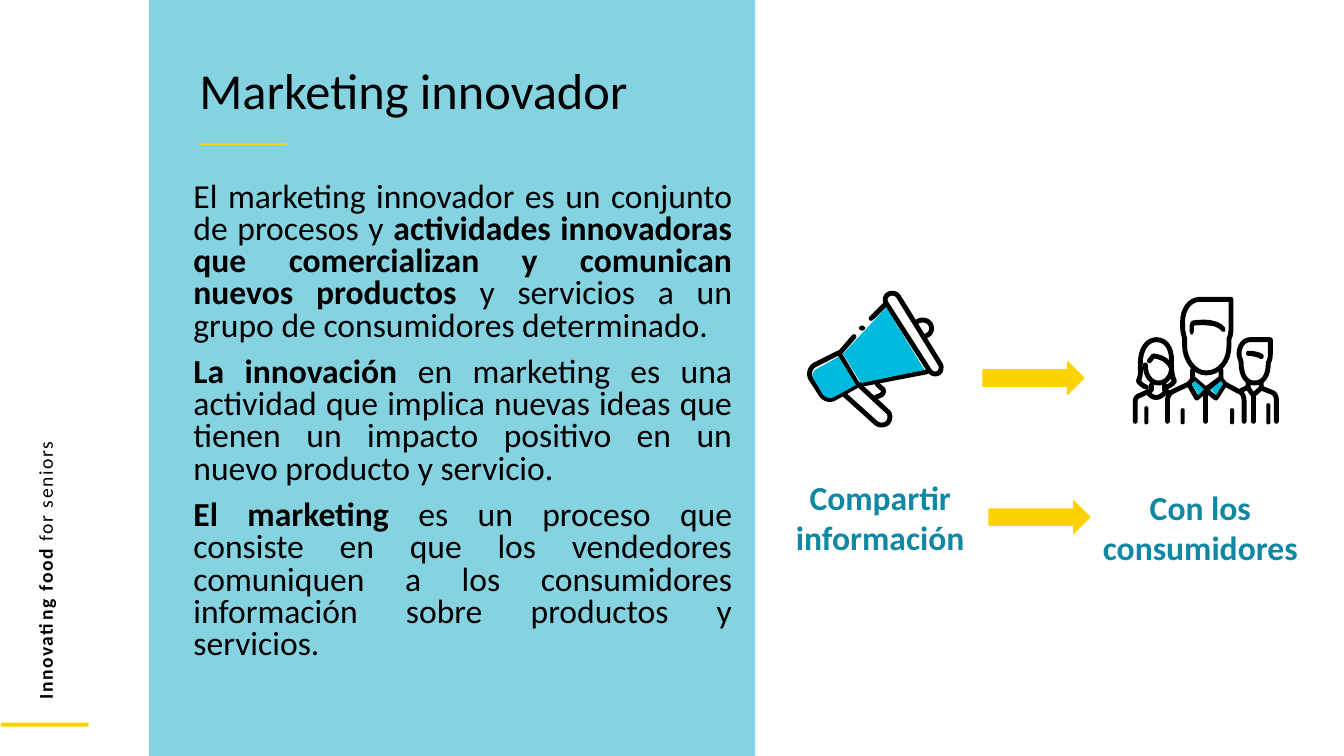
from lxml.etree import SubElement
from pptx import Presentation
from pptx.dml.color import RGBColor
from pptx.enum.shapes import MSO_SHAPE
from pptx.enum.text import MSO_ANCHOR, PP_ALIGN
from pptx.oxml.ns import qn
from pptx.util import Inches, Pt

WIDTH, HEIGHT = 13.33, 7.5
FONT = "Calibri"
BLACK = "000000"
AQUA, CYAN, TEAL = "85D2E1", "00BADE", "1188A3"
YELLOW, AMBER = "FFD100", "FED100"
UNITS_PER_INCH = 100
STROKE = 3.5

bands = [
    (AQUA, 1.48, 0, 6.01, HEIGHT),
    (YELLOW, 0.01, 7.17, 0.87, 0.04),
    (YELLOW, 1.98, 1.42, 0.86, 0.02),
]
tagline = [[("Innovating food ", True), ("for seniors", False)]]
title = [[("Marketing innovador", False)]]
explanation = [
    [
        ("El marketing innovador es un conjunto de procesos y ", False),
        ("actividades innovadoras que comercializan y comunican nuevos productos ", True),
        ("y servicios a un grupo de consumidores determinado. ", False),
    ],
    [
        ("La innovación ", True),
        ("en marketing es una actividad que implica nuevas ideas que tienen un impacto "
         "positivo en un nuevo producto y servicio.\u00a0", False),
    ],
    [
        ("El marketing ", True),
        ("es un proceso que consiste en que los vendedores comuniquen a los consumidores "
         "información sobre productos y servicios.", False),
    ],
]
captions = [
    ("Compartir información", 7.79, 4.68, 1.88),
    ("Con los consumidores", 10.81, 4.78, 2.19),
]
arrows = [(9.75, 3.59), (9.81, 4.97)]

horn = "M 879 305 L 917 367 L 854 380 L 836 351 Z"
mouthpiece = ("M 827 394 C 823 396 818 394 816 391 L 807 376 C 806 374 806 372 806 371 "
              "C 807 369 808 367 810 366 L 832 354 L 849 382 Z")
megaphone = (
    "M 879 301 L 922 368 C 924 371 928 372 931 370 C 933 369 934 365 933 362 "
    "L 891 294 C 889 291 885 290 881 292 C 878 294 877 298 879 301 Z "
    "M 910 319 C 915 316 921 318 923 322 C 925 326 924 331 919 333 "
    "M 919 369 L 851 382 M 834 349 L 847 334 M 864 316 L 878 302 "
    "M 832 350 L 851 382 L 828 395 C 823 398 817 396 814 391 "
    "L 805 377 C 801 372 803 365 808 362 Z "
    "M 838 392 L 868 419 C 872 423 877 422 880 420 C 883 417 884 411 880 408 L 853 383 "
    "M 869 394 L 874 392 C 877 390 877 386 874 385 L 870 381"
)
collars = [
    "M 1189 392 L 1182 381 L 1185 378 L 1194 386 Z",
    "M 1206 392 L 1201 386 L 1211 378 L 1213 381 Z",
]
man = (
    "M 1221 297 L 1190 297 C 1180 297 1173 307 1173 319 L 1173 324 C 1173 328 1174 332 1175 336 "
    "L 1175 343 C 1175 357 1185 370 1196 370 C 1210 370 1219 358 1219 343 L 1219 336 "
    "C 1221 332 1221 328 1221 324 Z M 1183 367 L 1183 375 L 1196 386 L 1211 375 L 1211 367 "
    "M 1183 376 L 1179 381 L 1187 395 L 1196 387 Z M 1211 376 L 1215 381 L 1206 395 L 1196 387 Z "
    "M 1158 418 L 1158 398 C 1158 393 1160 390 1164 388 L 1179 381 "
    "M 1234 418 L 1234 398 C 1234 393 1232 389 1228 388 L 1215 381 M 1196 387 L 1196 418"
)
woman = (
    "M 1137 384 C 1133 383 1130 379 1129 378 C 1132 373 1131 366 1131 361 "
    "C 1131 346 1138 337 1147 337 C 1157 337 1162 346 1162 357 C 1162 366 1162 373 1165 378 "
    "C 1163 381 1160 383 1157 384 M 1136 362 C 1136 373 1142 380 1149 380 "
    "C 1156 380 1162 374 1162 365 C 1158 356 1150 354 1144 353 L 1140 358 "
    "M 1142 382 L 1142 387 L 1129 393 C 1127 394 1126 396 1126 399 L 1126 418 "
    "M 1139 390 C 1144 396 1150 396 1156 389 M 1155 382 L 1155 387 L 1160 390"
)
boy = (
    "M 1260 337 L 1240 337 C 1233 337 1229 344 1229 351 C 1229 355 1231 357 1231 360 "
    "C 1231 372 1236 380 1244 380 C 1253 380 1258 373 1258 360 C 1260 356 1260 353 1260 350 Z "
    "M 1238 380 L 1238 384 L 1230 388 M 1238 385 L 1243 392 L 1251 385 "
    "M 1251 380 L 1251 385 L 1261 389 C 1265 390 1266 394 1266 397 L 1266 418 M 1243 393 L 1243 418"
)
man_fringe = (
    "M 1215 325 C 1207 315 1190 317 1183 318 C 1181 319 1180 321 1180 323 L 1180 329 "
    "C 1180 330 1181 332 1182 332 C 1183 332 1184 330 1184 329 L 1184 323 "
    "C 1187 323 1192 322 1198 323 C 1204 323 1209 325 1212 329 C 1213 329 1214 329 1215 329 "
    "C 1215 327 1215 326 1215 325 Z"
)
boy_fringe = (
    "M 1252 351 C 1247 348 1238 348 1238 348 C 1237 348 1236 349 1236 351 "
    "C 1236 352 1237 353 1238 353 C 1240 353 1247 354 1250 356 C 1251 356 1251 356 1251 356 "
    "C 1252 356 1253 356 1253 355 C 1254 353 1253 352 1252 351 Z"
)
dot = (852, 323, 6, 5)
sleeves = [(1135, 403, 4, 18), (1171, 405, 4, 16), (1220, 405, 4, 16), (1256, 400, 4, 21)]


def color(value):
    return RGBColor.from_string(value)


def paint(shape, fill, line=None, weight=1):
    shape.shadow.inherit = False
    if fill:
        shape.fill.solid()
        shape.fill.fore_color.rgb = color(fill)
    else:
        shape.fill.background()
    if line:
        shape.line.color.rgb = color(line)
        shape.line.width = Pt(weight)
    else:
        shape.line.fill.background()


def add_preset(slide, preset, box, fill, line=None):
    paint(slide.shapes.add_shape(preset, *map(Inches, box)), fill, line)


def capsule(left, top, width, height):
    right, bottom, r = left + width, top + height, width / 2
    return (f"M {left} {top + r} C {left} {top - r / 3} {right} {top - r / 3} {right} {top + r} "
            f"L {right} {bottom - r} C {right} {bottom + r / 3} {left} {bottom + r / 3} "
            f"{left} {bottom - r} Z")


def curve(start, first, second, end, steps=8):
    for step in range(1, steps + 1):
        t = step / steps
        u = 1 - t
        yield tuple(u**3 * a + 3 * u * u * t * b + 3 * u * t * t * c + t**3 * d
                    for a, b, c, d in zip(start, first, second, end))


def trace(outline):
    tokens = iter(outline.split())

    def point():
        return tuple(Inches(float(next(tokens)) / UNITS_PER_INCH) for _ in range(2))

    contours = []
    for command in tokens:
        if command == "M":
            contours.append(([point()], False))
        elif command == "L":
            contours[-1][0].append(point())
        elif command == "C":
            points = contours[-1][0]
            points.extend(list(curve(points[-1], point(), point(), point())))
        else:
            contours[-1] = (contours[-1][0], True)
    return contours


def add_drawing(slide, outline, fill, line=None):
    contours = trace(outline)
    builder = slide.shapes.build_freeform(*contours[0][0][0])
    for index, (points, closed) in enumerate(contours):
        if index:
            builder.move_to(*points[0])
        builder.add_line_segments(points[1:], close=closed)
    shape = builder.convert_to_shape()
    paint(shape, fill, line, STROKE)
    if line:
        stroke = shape.line._get_or_add_ln()
        stroke.set("cap", "rnd")
        SubElement(stroke, qn("a:round"))


def add_text(slide, box, paragraphs, size, ink=BLACK, align=PP_ALIGN.LEFT, spacing=1.0,
             before=0, indent=0, side=0.1, tracking=0):
    holder = slide.shapes.add_textbox(*map(Inches, box))
    frame = holder.text_frame
    frame.word_wrap = True
    frame.vertical_anchor = MSO_ANCHOR.TOP
    frame.margin_left = frame.margin_right = Inches(side)
    for index, runs in enumerate(paragraphs):
        paragraph = frame.add_paragraph() if index else frame.paragraphs[0]
        paragraph.alignment = align
        paragraph.line_spacing = spacing
        paragraph.space_before = Pt(before if index else 0)
        if indent:
            paragraph._p.get_or_add_pPr().set("marL", str(Inches(indent)))
        for words, bold in runs:
            run = paragraph.add_run()
            run.text = words
            run.font.name = FONT
            run.font.size = Pt(size)
            run.font.bold = bold
            run.font.color.rgb = color(ink)
            if tracking:
                run._r.get_or_add_rPr().set("spc", str(round(tracking * 100)))
    return holder


def main():
    deck = Presentation()
    deck.slide_width, deck.slide_height = Inches(WIDTH), Inches(HEIGHT)
    slide = deck.slides.add_slide(deck.slide_layouts[6])
    for fill, *box in bands:
        add_preset(slide, MSO_SHAPE.RECTANGLE, box, fill)
    add_text(slide, (-3.32, 3.1, 7.54, 0.34), tagline, 14, tracking=1.1).rotation = 270
    add_text(slide, (1.57, 1.76, 5.79, 5.13), explanation, 24, align=PP_ALIGN.JUSTIFY,
             spacing=0.8, before=10, indent=0.25)
    add_text(slide, (1.88, 0.65, 5.16, 0.64), title, 36, spacing=0.8)
    for outline in (megaphone, " ".join((man, woman, boy))):
        add_drawing(slide, outline, None, BLACK)
    for outline in (man_fringe, boy_fringe, *(capsule(*box) for box in (dot, *sleeves))):
        add_drawing(slide, outline, BLACK)
    for outline in (horn, mouthpiece, *collars):
        add_drawing(slide, outline, CYAN)
    for left, top in arrows:
        add_preset(slide, MSO_SHAPE.RIGHT_ARROW, (left, top, 1, 0.32), AMBER, AMBER)
    for words, left, top, width in captions:
        add_text(slide, (left, top, width, 0.91), [[(words, True)]], 24, TEAL,
                 PP_ALIGN.CENTER, side=0.05)
    deck.save("out.pptx")


if __name__ == "__main__":
    main()
